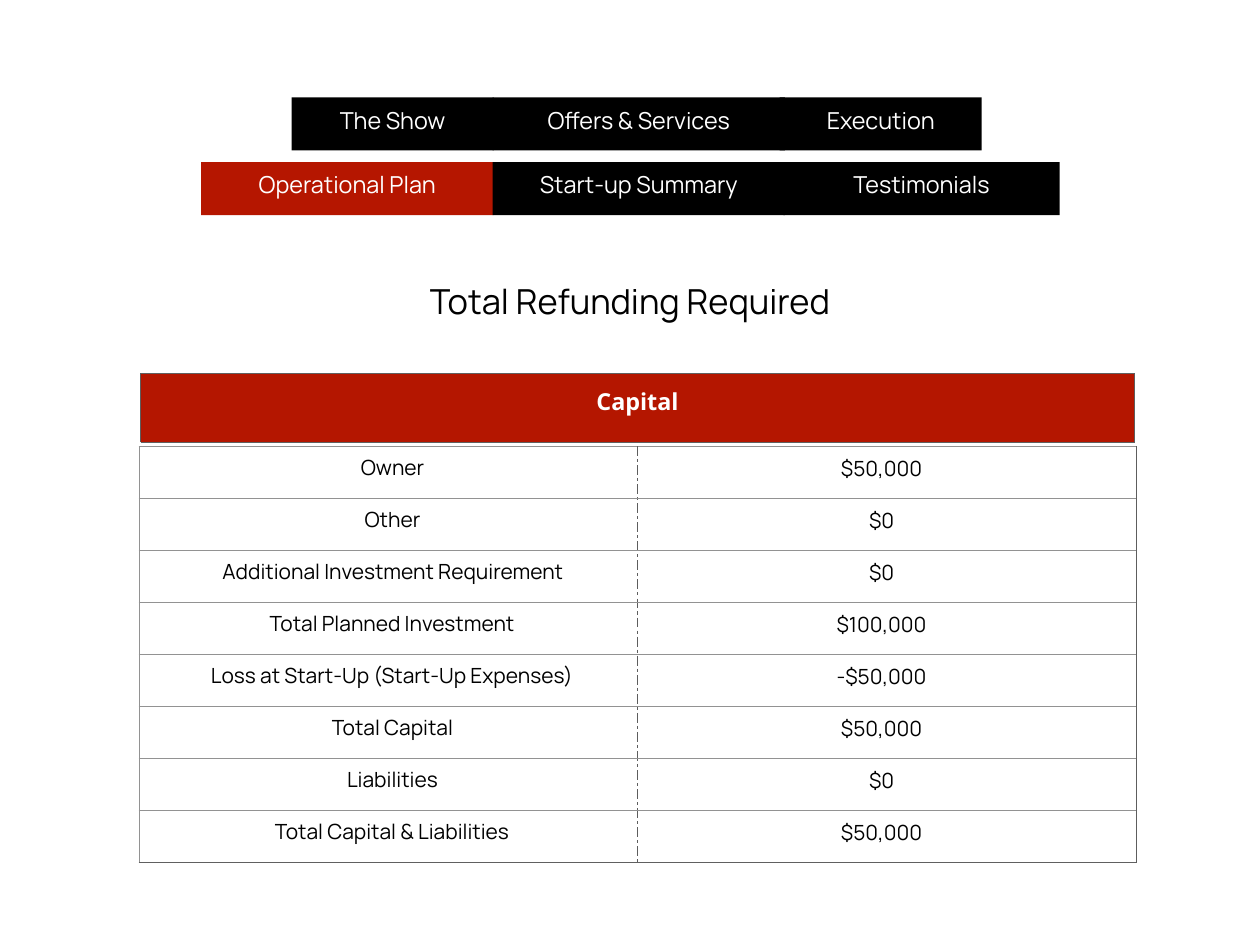
from lxml.etree import SubElement
from pptx import Presentation
from pptx.dml.color import RGBColor
from pptx.enum.shapes import MSO_SHAPE as Preset
from pptx.enum.text import MSO_ANCHOR as Anchor, PP_ALIGN as Align
from pptx.oxml.ns import qn
from pptx.util import Inches, Pt

COLORS = {
    "black": "000000",
    "white": "FFFFFF",
    "active": "B51600",
    "header": "B41600",
    "rule": "929292",
    "edge": "5D5D5D",
    "base": "606060",
}


def write_text(box, text, size, color, font="Manrope", bold=False, bottom=0.03):
    frame = box.text_frame
    frame.margin_left = frame.margin_right = frame.margin_top = Inches(0.03)
    frame.margin_bottom = Inches(bottom)
    frame.vertical_anchor = Anchor.MIDDLE
    frame.word_wrap = True
    para = frame.paragraphs[0]
    para.alignment = Align.CENTER
    span = para.add_run()
    span.text = text
    span.font.name = font
    span.font.size = Pt(size)
    span.font.bold = bold
    span.font.color.rgb = RGBColor.from_string(COLORS[color])


def style_cell(cell, fill, borders):
    properties = cell._tc.get_or_add_tcPr()
    for side, (color, dash) in zip("LRTB", borders):
        line = SubElement(properties, qn(f"a:ln{side}"), w=str(Pt(0.75)))
        solid = SubElement(line, qn("a:solidFill"))
        SubElement(solid, qn("a:srgbClr"), val=COLORS[color])
        SubElement(line, qn("a:prstDash"), val=dash)
    cell.fill.solid()
    cell.fill.fore_color.rgb = RGBColor.from_string(COLORS[fill])


deck = Presentation()
deck.slide_width = Inches(14.22)
deck.slide_height = Inches(10.67)
page = deck.slides.add_slide(deck.slide_layouts[5])

title = page.shapes.title
title.left, title.top = Inches(4.63), Inches(3.09)
title.width, title.height = Inches(4.96), Inches(0.6)
write_text(title, "Total Refunding Required", 28, "black")

capital_rows = [
    ("Owner", 2.78, 3.3, "$50,000"),
    ("Other", 2.78, 3.3, "$0"),
    ("Additional Investment Requirement", 1.87, 5.13, "$0"),
    ("Total Planned Investment", 2.41, 4.03, "$100,000"),
    ("Loss at Start-Up (Start-Up Expenses)", 2.09, 4.67, "-$50,000"),
    ("Total Capital", 2.78, 3.3, "$50,000"),
    ("Liabilities", 2.78, 3.3, "$0"),
    ("Total Capital & Liabilities", 2.64, 3.57, "$50,000"),
]
row_count = len(capital_rows)
table_height = Inches(4.7)
row_height = table_height // row_count
capital = page.shapes.add_table(
    row_count, 2, Inches(1.57), Inches(5.04), Inches(11.25), table_height
).table
header = page.shapes.add_table(1, 1, Inches(1.59), Inches(4.22), Inches(11.21), Inches(0.77)).table
for table in (capital, header):
    table.first_row = False
    table.horz_banding = False

edge, base = ("edge", "solid"), ("base", "solid")
rule, divider = ("rule", "solid"), ("edge", "dashDot")

style_cell(header.cell(0, 0), "header", [edge, edge, base, base])
heading = page.shapes.add_textbox(Inches(5.78), Inches(4.29), Inches(2.83), Inches(0.47))
write_text(heading, "Capital", 19, "white", "Open Sans", True)

for index, (label, label_left, label_width, amount) in enumerate(capital_rows):
    bottom_border = base if index == row_count - 1 else rule
    style_cell(capital.cell(index, 0), "white", [rule, divider, rule, bottom_border])
    style_cell(capital.cell(index, 1), "white", [divider, edge, rule, bottom_border])
    entries = [(label, label_left, 5.04, label_width), (amount, 8.72, 5.05, 2.46)]
    for text, left, first_top, width in entries:
        top = Inches(first_top) + row_height * index
        box = page.shapes.add_textbox(Inches(left), top, Inches(width), Inches(0.47))
        write_text(box, text, 17, "black")

tabs = [
    ("Operational Plan", 2.27, 1.83, 3.3, "active"),
    ("Testimonials", 8.84, 1.83, 3.12, "black"),
    ("Start-up Summary", 5.56, 1.83, 3.3, "black"),
    ("The Show", 3.29, 1.1, 2.28, "black"),
    ("Execution", 8.8, 1.1, 2.28, "black"),
    ("Offers & Services", 5.56, 1.1, 3.3, "black"),
]
for label, left, top, width, color in tabs:
    tab = page.shapes.add_shape(Preset.RECTANGLE, Inches(left), Inches(top), Inches(width), Inches(0.6))
    tab.shadow.inherit = False
    tab.fill.solid()
    tab.fill.fore_color.rgb = RGBColor.from_string(COLORS[color])
    tab.line.fill.background()
    write_text(tab, label, 19, "white", bottom=0.12)

deck.save("out.pptx")
